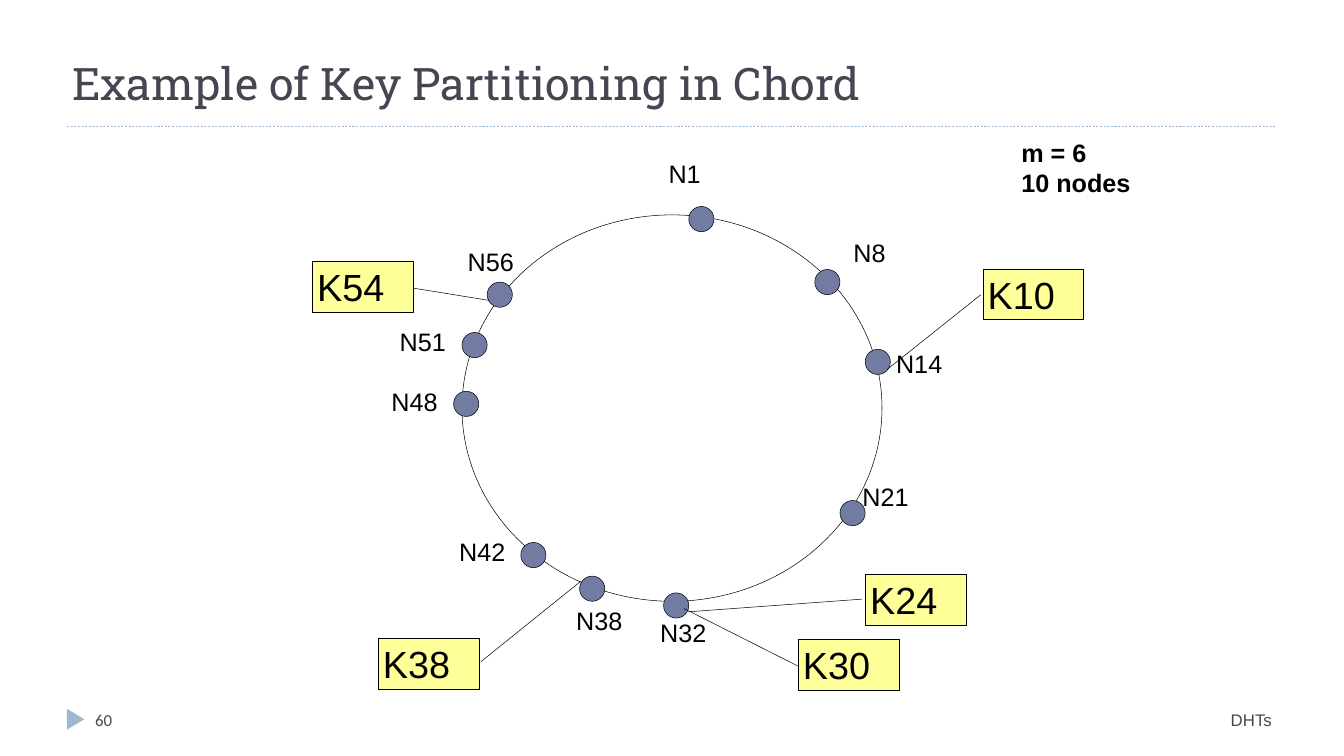
from typing import NamedTuple

from lxml.etree import SubElement
from pptx import Presentation
from pptx.dml.color import RGBColor
from pptx.enum.dml import MSO_LINE
from pptx.enum.shapes import MSO_CONNECTOR, MSO_SHAPE
from pptx.enum.text import MSO_ANCHOR, MSO_AUTO_SIZE, PP_ALIGN
from pptx.oxml.ns import qn
from pptx.util import Pt

BLACK, SLATE, NODE_BLUE = "000000", "464653", "727CA3"
PALE_BLUE, YELLOW = "9FB8CD", "FFFF99"
NODE_SIZE = 36
LABEL_HEIGHT = 51


class Node(NamedTuple):
    name: str
    cx: float
    cy: float
    label_x: float
    label_y: float


class Key(NamedTuple):
    name: str
    x: float
    y: float
    pointer: tuple[float, float, float, float]  # start y, x; end y, x


NODES = [
    Node("N1", 1002, 313, 948, 223),
    Node("N8", 1182, 403, 1212, 336),
    Node("N14", 1254, 517, 1273, 494),
    Node("N21", 1218, 733, 1225, 684),
    Node("N32", 966, 865, 936, 878),
    Node("N38", 846, 841, 816, 861),
    Node("N42", 762, 793, 649, 763),
    Node("N48", 666, 577, 552, 549),
    Node("N51", 678, 493, 564, 463),
    Node("N56", 714, 421, 661, 348),
]
KEYS = [
    Key("K10", 1404, 384, (0.51, -0.02, 1.98, -0.95)),
    Key("K54", 446, 373, (0.53, 1, 0.77, 1.75)),
    Key("K24", 1236, 821, (0.48, -0.03, 0.73, -1.76)),
    Key("K30", 1140, 913, (0.53, 0, -0.6, -1.13)),
    Key("K38", 540, 912, (0.46, 1.02, -1.12, 2.01)),
]


def rgb(color: str) -> RGBColor:
    return RGBColor.from_string(color)


def write(tf, lines: list[str], size: float, color: str = BLACK,
          font: str = "Arial", bold: bool = False, align=PP_ALIGN.LEFT) -> None:
    for i, line in enumerate(lines):
        p = tf.add_paragraph() if i else tf.paragraphs[0]
        p.alignment = align
        r = p.add_run()
        r.text = line
        r.font.size = Pt(size)
        r.font.name = font
        r.font.bold = bold
        r.font.color.rgb = rgb(color)


def add_text(s, x: float, y: float, w: float, h: float, lines: list[str],
             size: float, wrap: bool = True, anchor=MSO_ANCHOR.TOP, **style):
    tf = s.shapes.add_textbox(Pt(x), Pt(y), Pt(w), Pt(h)).text_frame
    tf.word_wrap = wrap
    tf.auto_size = MSO_AUTO_SIZE.NONE if wrap else MSO_AUTO_SIZE.SHAPE_TO_FIT_TEXT
    tf.vertical_anchor = anchor
    write(tf, lines, size, **style)
    return tf


def add_shape(s, kind, x: float, y: float, w: float, h: float,
              fill: str | None = None, line: str | None = BLACK):
    sp = s.shapes.add_shape(kind, Pt(x), Pt(y), Pt(w), Pt(h))
    sp.shadow.inherit = False
    if fill:
        sp.fill.solid()
        sp.fill.fore_color.rgb = rgb(fill)
    else:
        sp.fill.background()
    if line:
        sp.line.color.rgb = rgb(line)
        sp.line.width = Pt(0.75)
    else:
        sp.line.fill.background()
    return sp


def add_rule(s, x1: float, x2: float, y: float) -> None:
    rule = s.shapes.add_connector(MSO_CONNECTOR.STRAIGHT, Pt(x1), Pt(y), Pt(x2), Pt(y))
    rule.line.color.rgb = rgb(PALE_BLUE)
    rule.line.width = Pt(0.75)
    rule.line.dash_style = MSO_LINE.DASH
    SubElement(rule._element.spPr, qn("a:effectLst"))


def add_node(s, node: Node) -> None:
    add_shape(s, MSO_SHAPE.OVAL, node.cx - NODE_SIZE / 2, node.cy - NODE_SIZE / 2,
              NODE_SIZE, NODE_SIZE, NODE_BLUE)
    width = 21 + 20 * len(node.name)
    add_text(s, node.label_x, node.label_y, width, LABEL_HEIGHT, [node.name], 36, wrap=False)


def add_key(s, key: Key) -> None:
    sp = add_shape(s, MSO_SHAPE.LINE_CALLOUT_1, key.x, key.y, 144, 72.7, YELLOW)
    for i, value in enumerate(key.pointer):
        sp.adjustments[i] = value
    tf = sp.text_frame
    tf.word_wrap = True
    tf.auto_size = MSO_AUTO_SIZE.SHAPE_TO_FIT_TEXT
    tf.vertical_anchor = MSO_ANCHOR.TOP
    write(tf, [key.name], 54)


def main() -> None:
    prs = Presentation()
    prs.slide_width, prs.slide_height = Pt(1920), Pt(1080)
    s = prs.slides.add_slide(prs.slide_layouts[6])

    add_rule(s, 96, 1824, 180)
    marker = add_shape(s, MSO_SHAPE.ISOSCELES_TRIANGLE, 93, 1015, 30, 25, PALE_BLUE, None)
    marker.rotation = 90
    title = add_text(s, 96, 0, 1728, 156, ["Example of Key Partitioning in Chord"], 64,
                     anchor=MSO_ANCHOR.BOTTOM, color=SLATE, font="Roboto Slab")
    title.margin_bottom = Pt(0)
    add_text(s, 1452, 192, 172, 94, ["m = 6", "10 nodes"], 36, wrap=False, bold=True)

    add_shape(s, MSO_SHAPE.OVAL, 660, 307, 600, 552)
    for node in NODES:
        add_node(s, node)
    for key in KEYS:
        add_key(s, key)

    add_text(s, 1088, 1010, 736, 58, ["DHTs"], 24, color=SLATE, align=PP_ALIGN.RIGHT)
    add_text(s, 129, 1010, 416, 58, ["60"], 24, color=SLATE, font="Calibri")
    prs.save("out.pptx")


if __name__ == "__main__":
    main()
